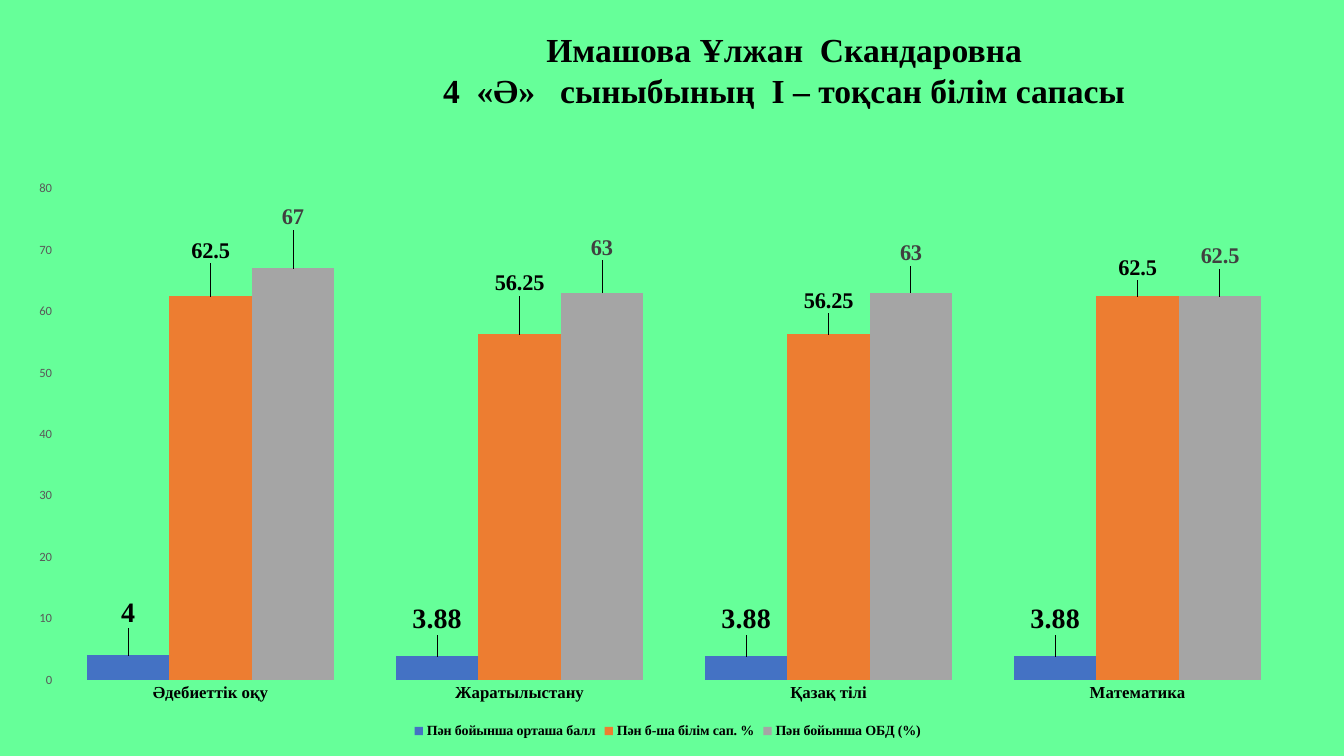
from lxml import etree
from pptx import Presentation
from pptx.chart import data
from pptx.dml.color import RGBColor
from pptx.enum import chart as ch, text
from pptx.oxml import ns
from pptx.util import Cm, Pt

SERIF = "Times New Roman"
HEAD = ["Имашова Ұлжан  Скандаровна", "4  «Ә»   сыныбының  І – тоқсан білім сапасы"]
CATS = ["Әдебиеттік оқу", "Жаратылыстану", "Қазақ тілі", "Математика"]
# name, values, fill, label size, label colour, label shifts as shares of the chart
ROWS = [
    ("Пән бойынша орташа балл", (4, 3.88, 3.88, 3.88), "4472C4", 20, "000000",
     [(0, -0.04), (0, -0.03), (0, -0.03), (0, -0.03)]),
    ("Пән б-ша білім сап. %", (62.5, 56.25, 56.25, 62.5), "ED7D31", 16, "000000",
     [(0, -0.05), (0, -0.06), (0, -0.03), (0, -0.02)]),
    ("Пән бойынша ОБД (%)", (67, 63, 63, 62.5), "A5A5A5", 16, "404040",
     [(0, -0.06), (0, -0.05), (0, -0.04), (0, -0.04)]),
]


def tint(hue):
    return RGBColor.from_string(hue)


def style(font, size, hue="000000", name=SERIF, bold=True):
    font.size, font.name, font.bold = Pt(size), name, bold
    font.color.rgb = tint(hue)


def layout(**vals):
    """Build a manual chart layout; values stay in schema order."""
    root = etree.Element(ns.qn("c:layout"))
    man = etree.SubElement(root, ns.qn("c:manualLayout"))
    for tag, val in vals.items():
        etree.SubElement(man, ns.qn("c:" + tag)).set("val", str(val))
    return root


def add_head(slide):
    box = slide.shapes.title
    box.left, box.top, box.width, box.height = Cm(9.54), Cm(0.6), Cm(19.38), Cm(2.31)
    frame = box.text_frame
    frame.auto_size = text.MSO_AUTO_SIZE.NONE
    frame.vertical_anchor = text.MSO_ANCHOR.MIDDLE
    frame.text = "\n".join(HEAD)
    for para in frame.paragraphs:
        para.alignment = text.PP_ALIGN.CENTER
        para.line_spacing = Pt(29)
        style(para.font, 24)
    frame.paragraphs[0]._p.get_or_add_pPr().set("marL", str(Cm(1.06)))


def set_axis(axis, size, hue, name, bold):
    axis.has_major_gridlines = False
    axis.major_tick_mark = axis.minor_tick_mark = ch.XL_TICK_MARK.NONE
    axis.format.line.fill.background()
    style(axis.tick_labels.font, size, hue, name, bold)


def set_bars(bars, fill, size, hue, moves):
    bars.format.fill.solid()
    bars.format.fill.fore_color.rgb = tint(fill)
    labels = bars.data_labels
    labels.show_value = True
    style(labels.font, size, hue)
    for idx in range(len(moves)):
        label = bars.points[idx].data_label
        label.position = ch.XL_LABEL_POSITION.OUTSIDE_END
        style(label.font, size, hue)
    for node, (dx, dy) in zip(bars._element.iter(ns.qn("c:dLbl")), moves):
        node.insert(1, layout(x=dx, y=dy))


def add_bars(slide):
    src = data.CategoryChartData()
    src.categories = CATS
    for name, vals, *_ in ROWS:
        src.add_series(name, vals)
    chart = slide.shapes.add_chart(
        ch.XL_CHART_TYPE.COLUMN_CLUSTERED,
        Cm(0.43), Cm(4.32), Cm(32.79), Cm(14.4), src).chart
    style(chart.font, 10, name="Calibri", bold=False)
    chart.has_title = False
    chart.has_legend = True
    chart.legend.position = ch.XL_LEGEND_POSITION.BOTTOM
    chart.legend.include_in_layout = False
    style(chart.legend.font, 10)
    set_axis(chart.category_axis, 12, "000000", SERIF, True)
    axis = chart.value_axis
    set_axis(axis, 9, "595959", "Calibri", False)
    axis.minimum_scale, axis.maximum_scale, axis.major_unit = 0, 80, 10
    plot = chart.plots[0]
    plot.gap_width, plot.overlap, plot.vary_by_categories = 75, 0, False
    for bars, row in zip(plot.series, ROWS):
        set_bars(bars, *row[2:])
    area = plot._element.getparent()
    for old in area.findall(ns.qn("c:layout")):
        area.remove(old)
    area.insert(0, layout(layoutTarget="inner", xMode="edge", yMode="edge",
                          x=0.03, y=0.03, w=0.95, h=0.86))


def main():
    deck = Presentation()
    deck.slide_width, deck.slide_height = Cm(33.87), Cm(19.05)
    slide = deck.slides.add_slide(deck.slide_layouts[5])
    back = slide.background.fill
    back.solid()
    back.fore_color.rgb = tint("66FF99")
    add_head(slide)
    add_bars(slide)
    deck.save("out.pptx")


if __name__ == "__main__":
    main()
